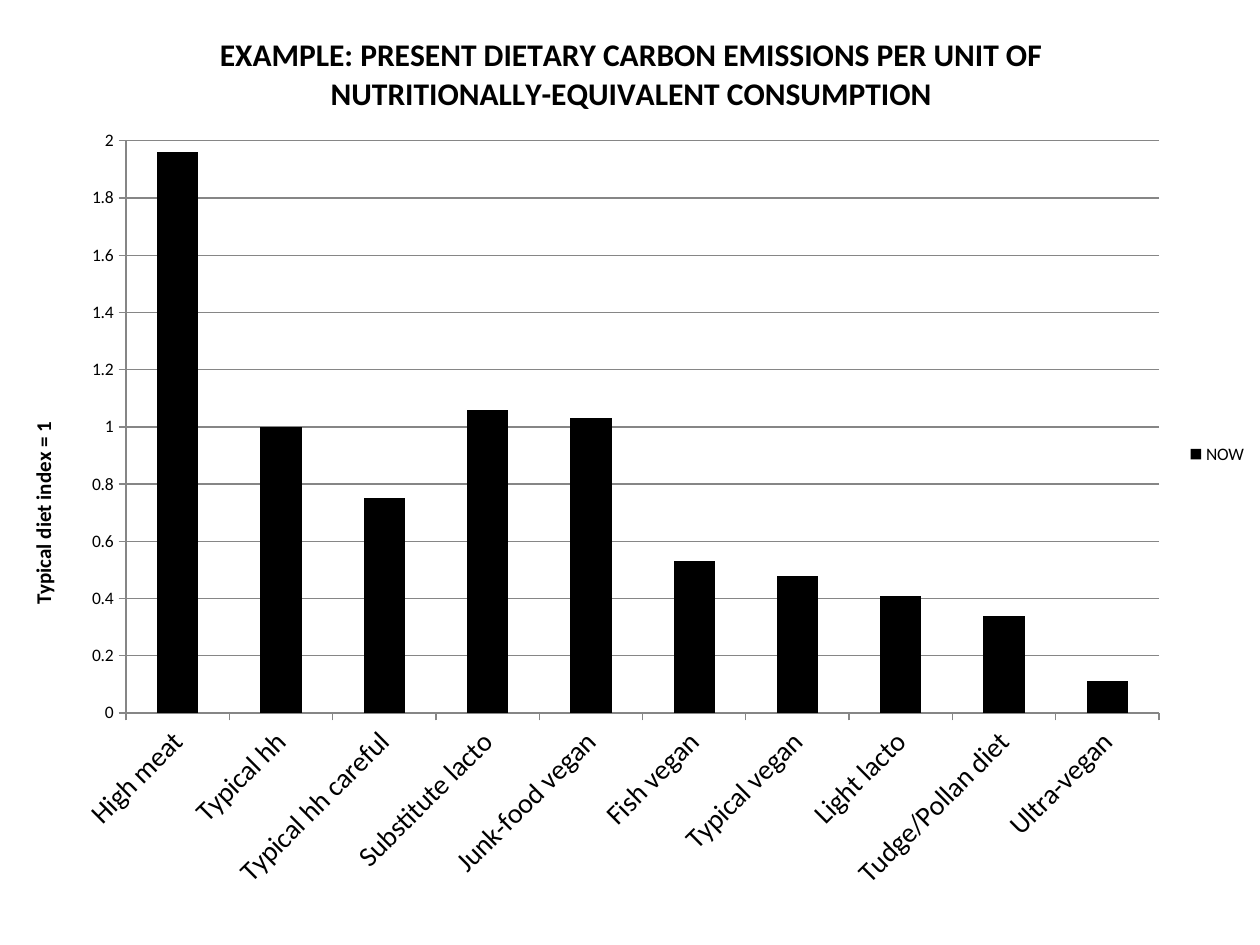
from lxml import etree
from pptx import Presentation
from pptx.chart.data import CategoryChartData
from pptx.dml.color import RGBColor
from pptx.enum.chart import XL_CHART_TYPE as ChartType, XL_LEGEND_POSITION as LegendPosition
from pptx.enum.chart import XL_TICK_MARK as TickMark
from pptx.oxml.ns import qn
from pptx.util import Inches, Pt

COLORS = {"ink": "000000", "rule": "868686"}
FONT = "Calibri"
DIETS = {
    "High meat": 1.96,
    "Typical hh": 1,
    "Typical hh careful": 0.75,
    "Substitute lacto": 1.06,
    "Junk-food vegan": 1.03,
    "Fish vegan": 0.53,
    "Typical vegan": 0.48,
    "Light lacto": 0.41,
    "Tudge/Pollan diet": 0.34,
    "Ultra-vegan": 0.11,
}


def place(parent, index, **fractions):
    """Give a chart part a manual layout, in fractions of the chart."""
    for old in parent.findall(qn("c:layout")):
        parent.remove(old)
    layout = etree.Element(qn("c:layout"))
    manual = etree.SubElement(layout, qn("c:manualLayout"))
    if "w" in fractions:
        etree.SubElement(manual, qn("c:layoutTarget"), val="inner")
    for side in ("x", "y"):
        etree.SubElement(manual, qn(f"c:{side}Mode"), val="edge")
    for name, value in fractions.items():
        etree.SubElement(manual, qn(f"c:{name}"), val=str(value))
    parent.insert(index, layout)


def write_title(owner, text, size, x, y):
    """Write a bold title on the chart or an axis and place it."""
    title = owner.chart_title if hasattr(owner, "chart_title") else owner.axis_title
    para = title.text_frame.paragraphs[0]
    span = para.add_run()
    span.text = text
    style = {"name": FONT, "size": Pt(size), "bold": True}
    for key, value in style.items():
        setattr(span.font, key, value)
    span.font.color.rgb = RGBColor.from_string(COLORS["ink"])
    place(title._element, 1, x=x, y=y)


deck = Presentation()
deck.slide_width, deck.slide_height = Inches(10), Inches(7.5)
page = deck.slides.add_slide(deck.slide_layouts[6])

# Column chart
data = CategoryChartData()
data.categories = list(DIETS)
data.add_series("NOW", list(DIETS.values()))
chart = page.shapes.add_chart(
    ChartType.COLUMN_CLUSTERED, Inches(0), Inches(0), Inches(10), Inches(7.21), data
).chart
chart.font.name = FONT
chart.font.size = Pt(10)
chart.font.color.rgb = RGBColor.from_string(COLORS["ink"])
place(chart._chartSpace.chart.plotArea, 0, x=0.1, y=0.155, w=0.82, h=0.63)

# Columns
plot = chart.plots[0]
plot.gap_width = 150
plot.vary_by_categories = False
fill = plot.series[0].format.fill
fill.solid()
fill.fore_color.rgb = RGBColor.from_string(COLORS["ink"])

# Axes and gridlines
diet_axis, index_axis = chart.category_axis, chart.value_axis
index_axis.minimum_scale = 0
index_axis.maximum_scale = 2
index_axis.major_unit = 0.2
index_axis.has_major_gridlines = True
for axis in (diet_axis, index_axis):
    axis.major_tick_mark = TickMark.OUTSIDE
    axis.minor_tick_mark = TickMark.NONE
for part in (diet_axis, index_axis, index_axis.major_gridlines):
    part.format.line.width = Pt(0.75)
    part.format.line.color.rgb = RGBColor.from_string(COLORS["rule"])

# Slanted diet names
diet_axis.tick_labels.font.size = Pt(16)
label_body = diet_axis._element.find(qn("c:txPr")).find(qn("a:bodyPr"))
label_body.set("rot", str(-45 * 60000))
label_body.set("vert", "horz")

# Titles
write_title(
    chart,
    "EXAMPLE: PRESENT DIETARY CARBON EMISSIONS PER UNIT OF "
    "NUTRITIONALLY-EQUIVALENT CONSUMPTION",
    18, x=0.17, y=0.03,
)
write_title(index_axis, "Typical diet index = 1", 12, x=0.02, y=0.46)
title_body = index_axis.axis_title.text_frame._txBody.find(qn("a:bodyPr"))
title_body.set("rot", str(-90 * 60000))
title_body.set("vert", "horz")

# Legend
chart.has_legend = True
chart.legend.position = LegendPosition.RIGHT
chart.legend.include_in_layout = False

deck.save("out.pptx")
